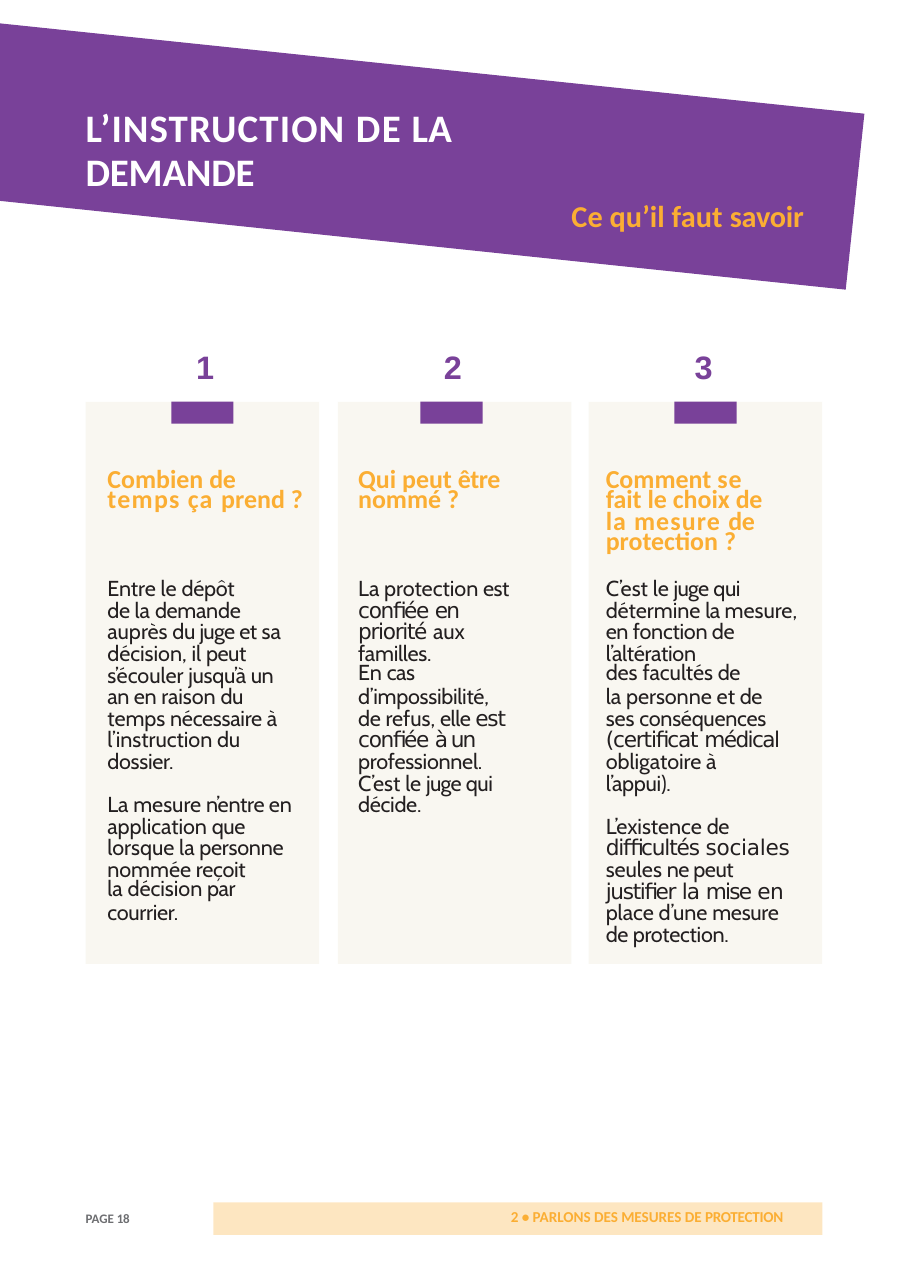
"""Build the page about how a request for protection is examined."""
import pptx
import pptx.dml.color
import pptx.enum.shapes
import pptx.enum.text
import pptx.oxml
import pptx.oxml.ns
import pptx.util

PX = 9144
PURPLE, ORANGE, SAND, INK, GREY, WHITE = "794199", "FBAE33", "E2D9BC", "231F20", "6D6E71", "FFFFFF"
WIDE = "DejaVu Sans"

COLUMNS = [
    {
        "card": 55, "tab": 110, "number": ("1", 125, 11, -2.7), "text": 68, "body": (126, 228),
        "heading": [
            (89, [("Combien ", 0), ("de", -0.2)]),
            (130, [("temps ça ", 0.6), ("prend ", 0), ("?", 0.3)]),
        ],
        "paras": [
            (10, 3, 33, [("Entre le ", 0), ("dépôt de ", -0.1), ("la ", 0), ("demande", -0.1)]),
            (0.83, 0, 10, [
                ("auprès ", 0), ("du", -0.1), (" juge ", -0.3), ("et ", -0.2), ("sa décision, il ", 0),
                ("peut ", -0.2), ("s’écouler ", 0), ("jusqu’à ", -0.1), ("un ", -0.2), ("an en ", -0.1),
                ("raison ", 0), ("du ", -0.2), ("temps ", 0), ("nécessaire ", -0.1),
                ("à l’instruction ", 0), ("du ", -0.2), ("dossier.", -0.1)]),
            (10, 9.9, 3, [
                ("La mesure ", 0), ("n’entre en ", -0.1), ("application ", 0), ("que ", -0.2),
                ("lorsque la ", 0), ("personne ", -0.1), ("nommée ", 0), ("reçoit", -0.1)]),
            (8.9, 0, 0, [("la décision ", 0), ("par", -0.2)]),
            (11, 0, 0, [("courrier.", -0.1)]),
        ],
    },
    {
        "card": 217, "tab": 270, "number": ("2", 284, 15, 0.3), "text": 229, "body": (115, 144),
        "heading": [
            (99, [("Qui peut ", 0), ("être", -0.2)]),
            (70, [("nommé ", 0), ("?", 0.3)]),
        ],
        "paras": [
            (10, 3, 8, [
                ("La protection ", 0), ("est ", -0.2), ("confiée ", -0.6, WIDE), ("en ", -0.8, WIDE),
                ("priorité ", -0.6, WIDE), ("aux ", 0), ("familles.", -0.1)]),
            (8.9, 0, 0, [("En ", 0), ("cas", -0.2)]),
            (10, 1, 17, [
                ("d’impossibilité, de ", -0.1), ("refus, ", 0), ("elle ", -0.2), ("est ", -0.5, WIDE),
                ("confiée ", -0.6, WIDE), ("à un ", -0.9, WIDE), ("professionnel. ", -0.1),
                ("C’est le ", 0), ("juge ", -0.3), ("qui ", -0.2), ("décide.", -0.1)]),
        ],
    },
    {
        "card": 378, "tab": 433, "number": ("3", 445, 15, 0.2), "text": 388, "body": (126, 241),
        "heading": [
            (96, [("Comment ", 0), ("se", 0.5)]),
            (112, [("fait le choix ", 0), ("de", -0.2)]),
            (99, [("la mesure ", 0.5), ("de", -0.2)]),
            (126, [("protection ", 0), ("?", 0.3)]),
        ],
        "paras": [
            (10, 3, 0, [
                ("C’est le ", 0), ("juge ", -0.3), ("qui ", -0.2), ("détermine ", 0), ("la ", -0.2),
                ("mesure, ", 0), ("en fonction de l’altération", -0.1)]),
            (8.9, 0, 0, [("des facultés ", 0), ("de", -0.2)]),
            (10, 1, 10, [
                ("la personne et ", 0), ("de ", -0.2), ("ses ", 0), ("conséquences ", -0.1),
                ("(certificat ", -0.5, WIDE), ("médical ", -0.7, WIDE), ("obligatoire ", 0),
                ("à ", -0.5), ("l’appui).", -0.1)]),
            (10, 9.9, 0, [
                ("L’existence ", 0), ("de ", -0.2), ("difficultés ", -0.5, WIDE),
                ("sociales ", -0.1, WIDE), ("seules ", 0), ("ne peut ", -0.2),
                ("justifier ", -0.6, WIDE), ("la ", -0.5, WIDE), ("mise ", -0.8, WIDE),
                ("en ", -0.2, WIDE), ("place d’une ", 0), ("mesure de protection.", -0.1)]),
        ],
    },
]


def color(value):
    """Turn a hex string into a colour."""
    return pptx.dml.color.RGBColor.from_string(value)


def paint(shape, fill, opacity=100):
    """Give a shape a flat fill without line or shadow."""
    shape.shadow.inherit = False
    shape.line.fill.background()
    shape.fill.solid()
    shape.fill.fore_color.rgb = color(fill)
    if opacity < 100:
        tint = shape.fill._xPr.find(".//" + pptx.oxml.ns.qn("a:srgbClr"))
        alpha = pptx.oxml.parse_xml(
            '<a:alpha xmlns:a="http://schemas.openxmlformats.org/drawingml/2006/main" '
            f'val="{opacity * 1000}"/>')
        tint.append(alpha)


def add_block(page, left, top, width, height, fill, opacity=100):
    """Add a filled rectangle."""
    block = page.shapes.add_shape(
        pptx.enum.shapes.MSO_SHAPE.RECTANGLE, left * PX, top * PX, width * PX, height * PX)
    paint(block, fill, opacity)
    return block


def add_banner(page):
    """Add the slanted purple banner."""
    builder = page.shapes.build_freeform(0, 15, scale=PX)
    builder.add_line_segments([(0, 129), (543, 186), (555, 73)], close=True)
    paint(builder.convert_to_shape(), PURPLE)


def write(shape, paras, size, fill, font="Calibri", bold=True, inset=1, indent=1):
    """Write paragraphs of (line spacing, space before, right margin, runs)."""
    frame = shape.text_frame
    frame.word_wrap = True
    frame.auto_size = pptx.enum.text.MSO_AUTO_SIZE.NONE
    frame.vertical_anchor = pptx.enum.text.MSO_ANCHOR.TOP
    frame.margin_left = indent * PX
    frame.margin_top = inset * PX
    frame.margin_right = frame.margin_bottom = 0
    for index, (spacing, before, right, runs) in enumerate(paras):
        para = frame.add_paragraph() if index else frame.paragraphs[0]
        para.alignment = pptx.enum.text.PP_ALIGN.LEFT
        para.line_spacing = pptx.util.Pt(spacing) if spacing > 2 else spacing
        para.space_before = pptx.util.Pt(before)
        para._p.get_or_add_pPr().set("marR", str(right * PX))
        for text, tracking, *other_font in runs:
            span = para.add_run()
            span.text = text
            span.font.size = pptx.util.Pt(size)
            span.font.name = other_font[0] if other_font else font
            span.font.bold = bold
            span.font.color.rgb = color(fill)
            span._r.get_or_add_rPr().set("spc", str(round(tracking * 100)))


def add_text(page, left, top, width, height, paras, size, fill, **style):
    """Add a text box."""
    box = page.shapes.add_textbox(left * PX, top * PX, width * PX, height * PX)
    write(box, paras, size, fill, **style)


def add_title(page):
    """Place and format the title."""
    title = page.shapes.title
    title.left, title.top, title.width, title.height = (n * PX for n in (54, 65, 241, 61))
    runs = [("L’INSTRUCTION ", 0.5), ("DE", 0.7), (" LA ", 0.2), ("DEMANDE", -0.1)]
    write(title, [(20, 3, 0, runs)], 18, WHITE, inset=4)
    page.shapes._spTree.append(title._element)


def add_column(page, column):
    """Add one numbered card with its heading and body."""
    add_block(page, column["card"], 258, 150, 361, SAND, 20)
    add_block(page, column["tab"], 258, 40, 14, PURPLE)
    digit, left, width, tracking = column["number"]
    add_text(page, left, 222, width, 28, [(1.0, 1, 0, [(digit, tracking)])], 15, PURPLE, font="Arial")
    for row, (width, runs) in enumerate(column["heading"]):
        add_text(page, column["text"], 296 + row * 27 // 2, width, 23, [(1.0, 1, 0, runs)], 12, ORANGE)
    width, height = column["body"]
    add_text(page, column["text"], 368, width, height, column["paras"], 10, INK,
             font="Cabin", bold=False, inset=4)


def add_footer(page):
    """Add the page number and the chapter strip."""
    add_text(page, 54, 776, 33, 13, [(1.0, 1, 0, [("PAGE ", 0), ("18", -0.2)])], 6, GREY)
    strip = add_block(page, 137, 772, 391, 21, ORANGE, 30)
    runs = [("2 • PARLONS DES MESURES DE ", 0), ("PROTECTION", -0.1)]
    write(strip, [(1.0, 2.5, 0, runs)], 7, ORANGE, inset=3, indent=191)


def main():
    """Build and save the deck."""
    deck = pptx.Presentation()
    deck.slide_width, deck.slide_height = 583 * PX, 827 * PX
    page = deck.slides.add_slide(deck.slide_layouts[5])
    add_footer(page)
    add_banner(page)
    add_title(page)
    subtitle = [("Ce qu’il faut ", 0), ("savoir", -0.1)]
    add_text(page, 366, 126, 164, 26, [(1.0, 1, 0, subtitle)], 14, ORANGE)
    for column in COLUMNS:
        add_column(page, column)
    deck.save("out.pptx")


if __name__ == "__main__":
    main()
